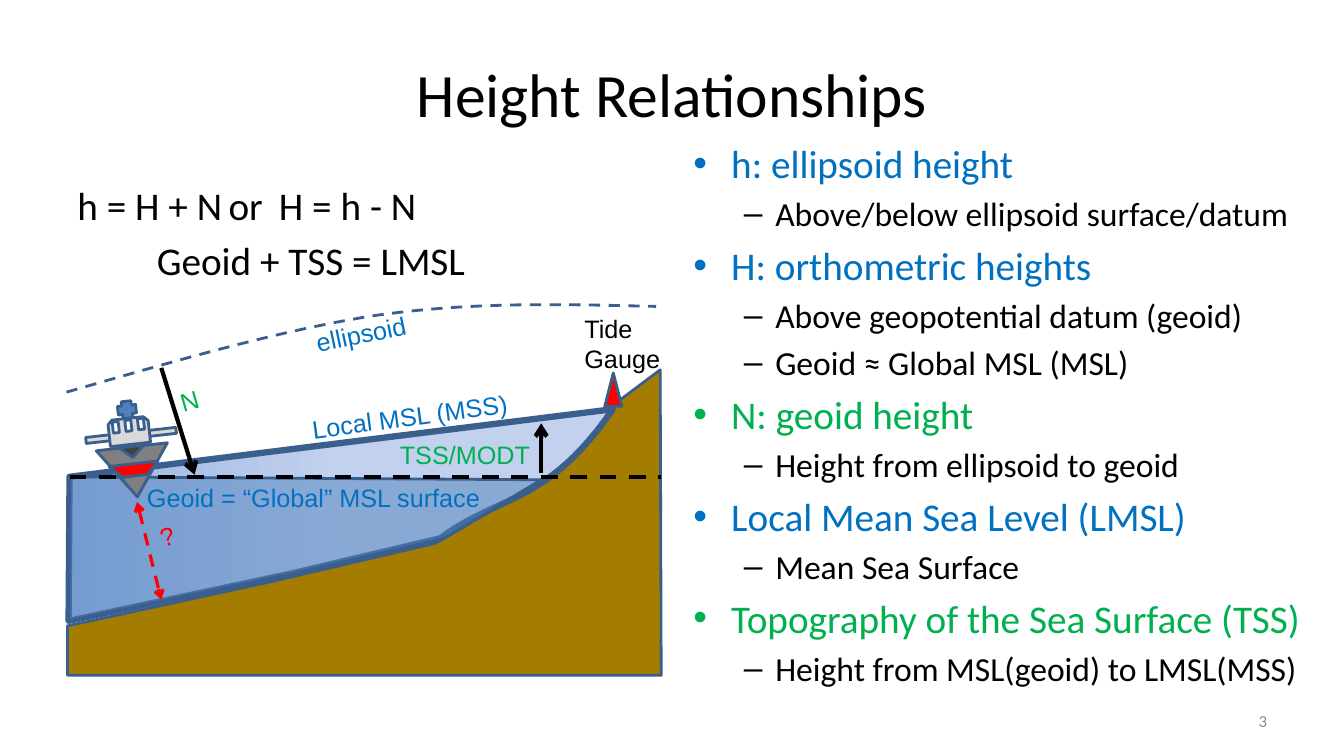
import pptx
import pptx.dml.color
import pptx.enum.dml
import pptx.enum.shapes
import pptx.enum.text
import pptx.oxml
import pptx.oxml.ns
import pptx.util

Pt = pptx.util.Pt
KIND = pptx.enum.shapes.MSO_SHAPE
ALIGN = pptx.enum.text.PP_ALIGN
DASH = pptx.enum.dml.MSO_LINE.DASH

HUES = {
    "black": "000000", "white": "FFFFFF", "blue": "0070C0", "green": "00B050",
    "red": "FF0000", "edge": "3A5F8C", "earth": "A47D00", "sea": "4F81BD",
    "pale": "C2D1ED", "mid": "9AB5E4", "steel": "808080", "dark": "404040",
    "light": "D9D9D9", "page": "8C8C8C",
}
LOOKS = {
    "title": {"name": "Calibri", "size": Pt(44)},
    "head": {"name": "Calibri", "size": Pt(28)},
    "sub": {"name": "Calibri", "size": Pt(24)},
    "label": {"name": "Arial", "size": Pt(18)},
    "page": {"name": "Calibri", "size": Pt(12)},
}

# Text content
TITLE = "Height Relationships"
SUMS = [("h = H + N\tor\tH = h - N", 0), ("Geoid + TSS = LMSL", 56.8)]
TABS = [160.8, 242.2]
TERMS = [
    ("h: ellipsoid height", "blue", ["Above/below ellipsoid surface/datum"]),
    ("H: orthometric heights", "blue",
     ["Above geopotential datum (geoid)", "Geoid ≈ Global MSL (MSL)"]),
    ("N: geoid height", "green", ["Height from ellipsoid to geoid"]),
    ("Local Mean Sea Level (LMSL)", "blue", ["Mean Sea Surface"]),
    ("Topography of the Sea Surface (TSS)", "green",
     ["Height from MSL(geoid) to LMSL(MSS)"]),
]
# Lines of text, colour, place, turn, wrap
LABELS = [
    (["Geoid = “Global” MSL surface"], "blue", (97.9, 341.3, 255.6, 28.8), 0, False),
    (["Local MSL (MSS)"], "blue", (215.3, 282.2, 164.2, 28.8), 352.4, True),
    (["TSS/MODT"], "green", (278.6, 310.3, 110.9, 28.8), 0, True),
    (["ellipsoid"], "blue", (218.2, 223.9, 79.9, 28.8), 348.2, False),
    (["N"], "green", (121.7, 271.4, 27.4, 28.8), 344, False),
    (["Tide", "Gauge"], "black", (410.4, 220.3, 69.1, 51.1), 0, False),
    (["?"], "red", (107.3, 368.6, 24.5, 28.8), 343.8, False),
]

# Outlines: two numbers make a straight side, six make a curve
EARTH = [(48.2, 447.1), (194.4, 415.4), (311, 388.1), (383, 346.3),
         (439.9, 288), (471.6, 264.2), (472.3, 482.4), (48.2, 482.4)]
WATER = [(49, 443.5), (49.7, 340.6), (437.8, 292.3),
         (391, 360.7, 355.7, 353.5, 314.6, 384.5), (208.1, 409.7)]
DEEP = [(49, 443.5), (49.7, 340.6), (386.6, 342.7), (317.5, 384.5), (209.5, 409.7)]
ARC = [(47.5, 280.1), (123.1, 258.5, 198, 236.2, 267.8, 225.4),
       (338.4, 215.3, 403.2, 217.4, 468.7, 218.9)]

# Ends, colour, width, dashed, arrow ends
LINES = [
    ((49.7, 340.6, 472.3, 340.6), "black", 3, True, []),
    ((386.6, 302.4, 386.6, 337.7), "black", 3, False, ["headEnd"]),
    ((115.2, 262.8, 139, 339.1), "black", 3, False, ["tailEnd"]),
    ((97.9, 358.6, 115.2, 428.4), "red", 2.25, True, ["headEnd", "tailEnd"]),
]

# Shape, place, turn, colour
TILT = 353.6
GAUGE = (KIND.ISOSCELES_TRIANGLE, (432, 266.4, 12.2, 23.8), 0, "red")
SHIP = [
    (KIND.ISOSCELES_TRIANGLE, (70.6, 319, 51.1, 36), TILT - 180, "steel"),
    (KIND.CROSS, (84.2, 286.6, 13, 12.2), TILT, "sea"),
    (KIND.ISOSCELES_TRIANGLE, (85.7, 319, 17.3, 7.9), TILT - 180, "dark"),
    (KIND.RECTANGLE, (61.2, 308.9, 64.8, 4.3), TILT, "light"),
    (KIND.SNIP_2_SAME_RECTANGLE, (77.8, 298.8, 28.8, 18.7), TILT, "light"),
    *[(KIND.RECTANGLE, (80.6 + 9 * i, 301.3 - 1.2 * i, 4.3, 7.9), TILT, "white")
      for i in range(3)],
    (KIND.DIAGONAL_STRIPE, (82.8, 319, 25.2, 24.5), 217.6, "red"),
]

deck = pptx.Presentation()
deck.slide_width, deck.slide_height = Pt(960), Pt(540)
slide = deck.slides.add_slide(deck.slide_layouts[6])


def hue(name):
    return pptx.dml.color.RGBColor.from_string(HUES[name])


def scale(nums):
    return [Pt(n) for n in nums]


def node(root, tag, **vals):
    item = pptx.oxml.parse_xml(f"<a:{tag} {pptx.oxml.ns.nsdecls('a')}/>")
    for key, val in vals.items():
        item.set(key, str(val))
    root.append(item)
    return item


def stroke(item, tint, width, dash=False):
    item.line.color.rgb = hue(tint)
    item.line.width = Pt(width)
    if dash:
        item.line.dash_style = DASH


def add_box(place, wrap=True, turn=0, mid=False):
    box = slide.shapes.add_textbox(*scale(place))
    box.rotation = turn
    frame = box.text_frame
    frame.word_wrap = wrap
    if mid:
        frame.vertical_anchor = pptx.enum.text.MSO_ANCHOR.MIDDLE
    return frame


def add_text(frame, text, look, tint, gap=0, align=ALIGN.LEFT):
    first = not frame.paragraphs[0].runs
    para = frame.paragraphs[0] if first else frame.add_paragraph()
    for key, val in {"alignment": align, "space_before": Pt(0 if first else gap)}.items():
        setattr(para, key, val)
    run = para.add_run()
    run.text = text
    for key, val in LOOKS[look].items():
        setattr(run.font, key, val)
    run.font.color.rgb = hue(tint)
    return para._p.get_or_add_pPr()


def indent(props, left, hang=0, mark=None):
    props.set("marL", str(Pt(left)))
    props.set("indent", str(Pt(-hang)))
    if mark:
        node(props, "buFont", typeface="Arial")
        node(props, "buChar", char=mark)


def trace(sides, steps=24):
    dots = [sides[0]]
    for side in sides[1:]:
        if len(side) == 2:
            dots.append(side)
            continue
        curve = [dots[-1], side[:2], side[2:4], side[4:]]
        for i in range(1, steps + 1):
            t = i / steps
            parts = [(1 - t) ** 3, 3 * t * (1 - t) ** 2, 3 * t * t * (1 - t), t ** 3]
            dots.append(tuple(sum(w * c[k] for w, c in zip(parts, curve)) for k in (0, 1)))
    return [scale(dot) for dot in dots]


def add_form(sides, width, close=True, dash=False):
    dots = trace(sides)
    pen = slide.shapes.build_freeform(*dots[0])
    pen.add_line_segments(dots[1:], close=close)
    form = pen.convert_to_shape()
    form.shadow.inherit = False
    stroke(form, "edge", width, dash)
    return form


def add_part(kind, place, turn, tint):
    part = slide.shapes.add_shape(kind, *scale(place))
    part.shadow.inherit = False
    part.rotation = turn
    part.fill.solid()
    part.fill.fore_color.rgb = hue(tint)
    stroke(part, "edge", 2)


# Title and sums
add_text(add_box((48.2, 21.6, 864, 90), mid=True), TITLE, "title", "black", align=ALIGN.CENTER)
frame = add_box((48.2, 126, 424.1, 76))
for text, left in SUMS:
    props = add_text(frame, text, "head", "black", 5.6)
    indent(props, left)
    if "\t" in text:
        tabs = node(props, "tabLst")
        for stop in TABS:
            node(tabs, "tab", pos=Pt(stop), algn="l")

# List of terms
frame = add_box((488.2, 95.8, 454.3, 437.8))
for term, tint, notes in TERMS:
    indent(add_text(frame, term, "head", tint, 5.6), 27, 27, "•")
    for note in notes:
        indent(add_text(frame, note, "sub", "black", 4.8), 58.5, 22.5, "–")

# Sea floor, water and ellipsoid
earth = add_form(EARTH, 2)
earth.fill.solid()
earth.fill.fore_color.rgb = hue("earth")
water = add_form(WATER, 4.5)
water.fill.gradient()
water.fill.gradient_angle = 180
for stop, tint, place in zip(water.fill.gradient_stops, ("pale", "mid"), (0.5, 1)):
    stop.color.rgb = hue(tint)
    stop.position = place
deep = add_form(DEEP, 2)
deep.fill.solid()
deep.fill.fore_color.rgb = hue("sea")
tone = deep.element.spPr.find(pptx.oxml.ns.qn("a:solidFill"))[0]
node(tone, "alpha", val=49000)
add_form(ARC, 2, close=False, dash=True).fill.background()

# Lines and arrows
for ends, tint, width, dash, tips in LINES:
    line = slide.shapes.add_connector(pptx.enum.shapes.MSO_CONNECTOR.STRAIGHT, *scale(ends))
    stroke(line, tint, width, dash)
    for tip in tips:
        node(line.line._get_or_add_ln(), tip, type="arrow")
    node(line.element.spPr, "effectLst")

# Labels, tide gauge, ship and page number
for texts, tint, place, turn, wrap in LABELS:
    frame = add_box(place, wrap, turn)
    for text in texts:
        add_text(frame, text, "label", tint)
for part in [GAUGE, *SHIP]:
    add_part(*part)
add_text(add_box((688.3, 500.4, 223.9, 28.8), mid=True), "3", "page", "page", align=ALIGN.RIGHT)

deck.save("out.pptx")
